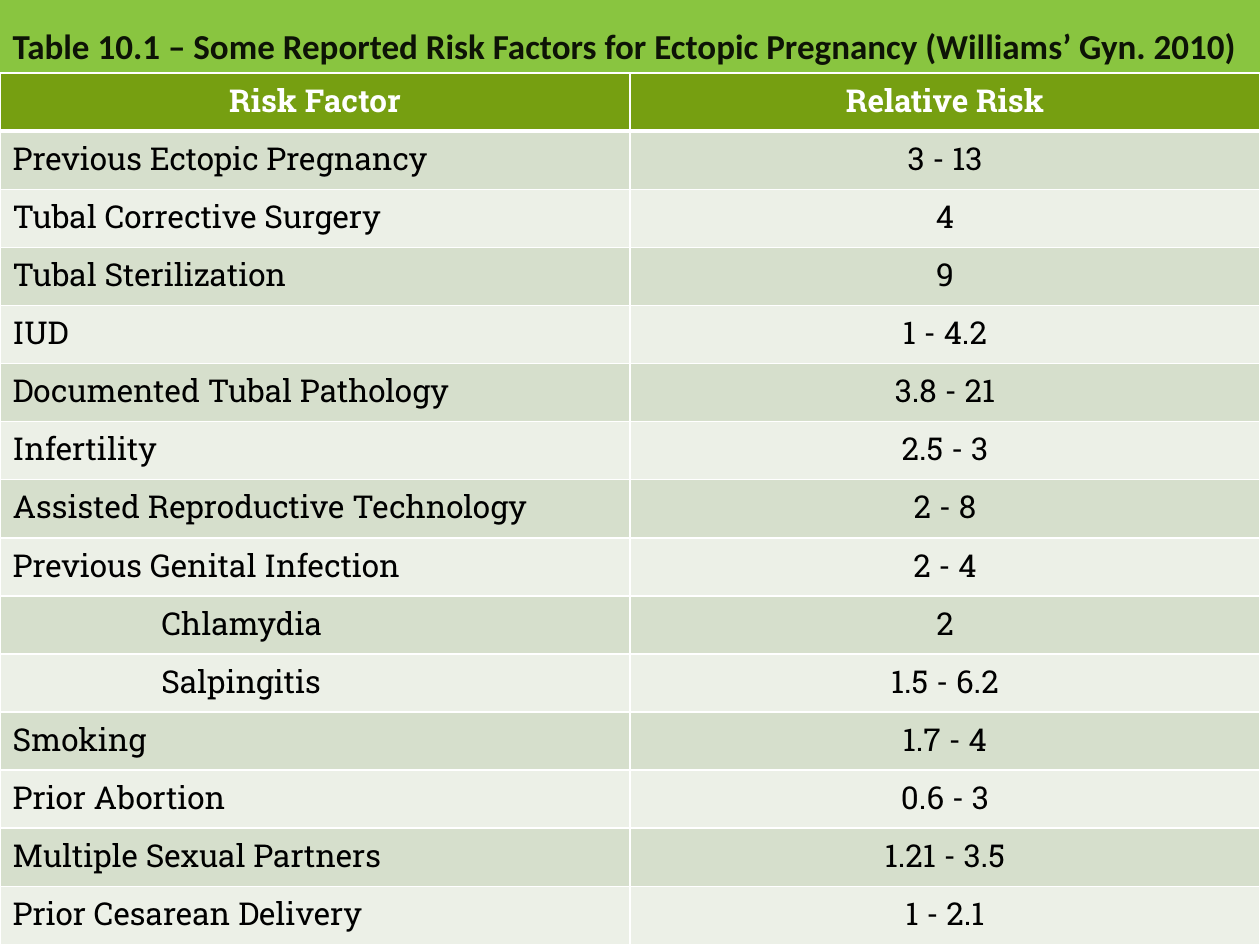
from dataclasses import dataclass

from lxml.etree import SubElement
from pptx import Presentation
from pptx.dml.color import RGBColor
from pptx.enum.text import MSO_ANCHOR, MSO_AUTO_SIZE, PP_ALIGN
from pptx.oxml.ns import qn
from pptx.util import Inches, Pt


@dataclass(frozen=True)
class Theme:
    """Colours, fonts and sizes of the slide."""
    background: str = "89C540"
    header: str = "769F11"
    bands: tuple = ("D6DFCC", "ECF0E7")
    light: str = "FFFFFF"
    dark: str = "000000"
    title_opacity: int = 90
    title_font: str = "Calibri"
    table_font: str = "Roboto Slab"
    title_size: int = 20
    table_size: int = 18
    rule: int = 1
    header_rule: int = 3


THEME = Theme()
TITLE = "Table 10.1 – Some Reported Risk Factors for Ectopic Pregnancy (Williams’ Gyn. 2010)"
HEADINGS = ("Risk Factor", "Relative Risk")
RISKS = (
    ("Previous Ectopic Pregnancy", "3 - 13"),
    ("Tubal Corrective Surgery", "4"),
    ("Tubal Sterilization", "9"),
    ("IUD", "1 - 4.2"),
    ("Documented Tubal Pathology", "3.8 - 21"),
    ("Infertility", "2.5 - 3"),
    ("Assisted Reproductive Technology", "2 - 8"),
    ("Previous Genital Infection", "2 - 4"),
    ("Chlamydia", "2"),
    ("Salpingitis", "1.5 - 6.2"),
    ("Smoking", "1.7 - 4"),
    ("Prior Abortion", "0.6 - 3"),
    ("Multiple Sexual Partners", "1.21 - 3.5"),
    ("Prior Cesarean Delivery", "1 - 2.1"),
)
INFECTIONS = ("Chlamydia", "Salpingitis")


def format_paragraph(paragraph, font_name, size, color, bold, alignment):
    """Set the font and alignment of a whole paragraph."""
    paragraph.alignment = alignment
    font = paragraph.font
    font.name, font.size, font.bold = font_name, Pt(size), bold
    font.color.rgb = RGBColor.from_string(color)


def add_borders(cell, **widths):
    """Draw the four borders of a cell, given widths for L, R, T and B."""
    properties = cell._tc.get_or_add_tcPr()
    for side in "LRTB":
        width = Pt(widths.get(side, THEME.rule))
        line = SubElement(properties, qn(f"a:ln{side}"), w=str(width))
        fill = SubElement(line, qn("a:solidFill"))
        SubElement(fill, qn("a:srgbClr"), val=THEME.light)


def place_title(slide, left, top, width, height):
    """Place the table caption in the title placeholder."""
    title = slide.shapes.title
    title.left, title.top, title.width, title.height = left, top, width, height
    frame = title.text_frame
    frame.text = TITLE
    frame.word_wrap = True
    frame.auto_size = MSO_AUTO_SIZE.NONE
    frame.vertical_anchor = MSO_ANCHOR.BOTTOM
    paragraph = frame.paragraphs[0]
    format_paragraph(paragraph, THEME.title_font, THEME.title_size, THEME.dark, True, PP_ALIGN.LEFT)
    for color in paragraph._p.iter(qn("a:srgbClr")):
        SubElement(color, qn("a:alpha"), val=str(THEME.title_opacity * 1000))


def place_risk_table(slide, left, top, width, height):
    """Place the table of risk factors with a header and banded rows."""
    rows = (HEADINGS, *RISKS)
    table = slide.shapes.add_table(len(rows), len(HEADINGS), left, top, width, height).table
    for row_index, row in enumerate(rows):
        is_header = row_index == 0
        fill = THEME.header if is_header else THEME.bands[(row_index - 1) % 2]
        color = THEME.light if is_header else THEME.dark
        heavy = {0: {"B": THEME.header_rule}, 1: {"T": THEME.header_rule}}.get(row_index, {})
        for column_index, text in enumerate(row):
            cell = table.cell(row_index, column_index)
            cell.text = text
            if text in INFECTIONS:
                cell.margin_left = Inches(1.28)
            add_borders(cell, **heavy)
            cell.fill.solid()
            cell.fill.fore_color.rgb = RGBColor.from_string(fill)
            centred = is_header or column_index == 1
            format_paragraph(cell.text_frame.paragraphs[0], THEME.table_font, THEME.table_size,
                             color, is_header, PP_ALIGN.CENTER if centred else PP_ALIGN.LEFT)


def main():
    """Build and save the slide."""
    presentation = Presentation()
    presentation.slide_width, presentation.slide_height = Inches(10), Inches(7.5)
    slide = presentation.slides.add_slide(presentation.slide_layouts.get_by_name("Title Only"))
    slide.background.fill.solid()
    slide.background.fill.fore_color.rgb = RGBColor.from_string(THEME.background)
    title_height = Inches(0.58)
    place_title(slide, 0, 0, presentation.slide_width, title_height)
    place_risk_table(slide, 0, title_height, presentation.slide_width,
                     presentation.slide_height - title_height)
    presentation.save("out.pptx")


if __name__ == "__main__":
    main()
